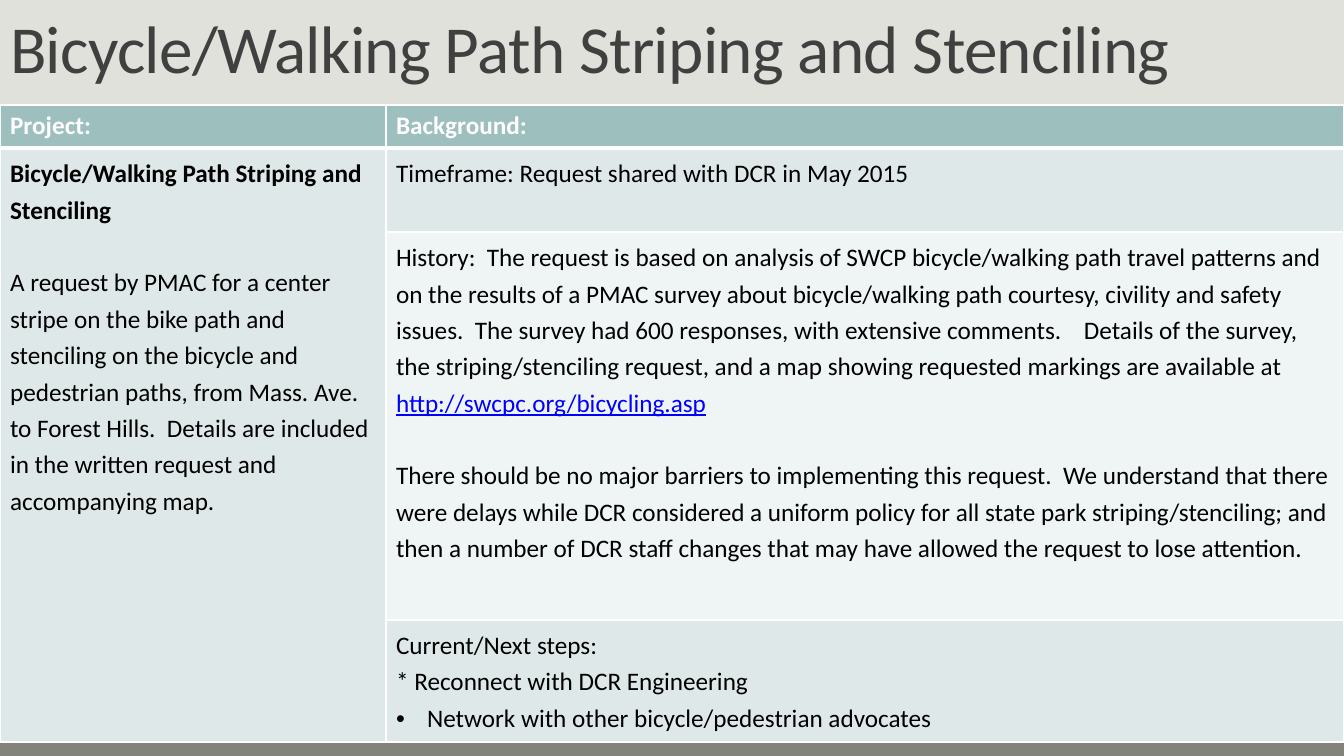
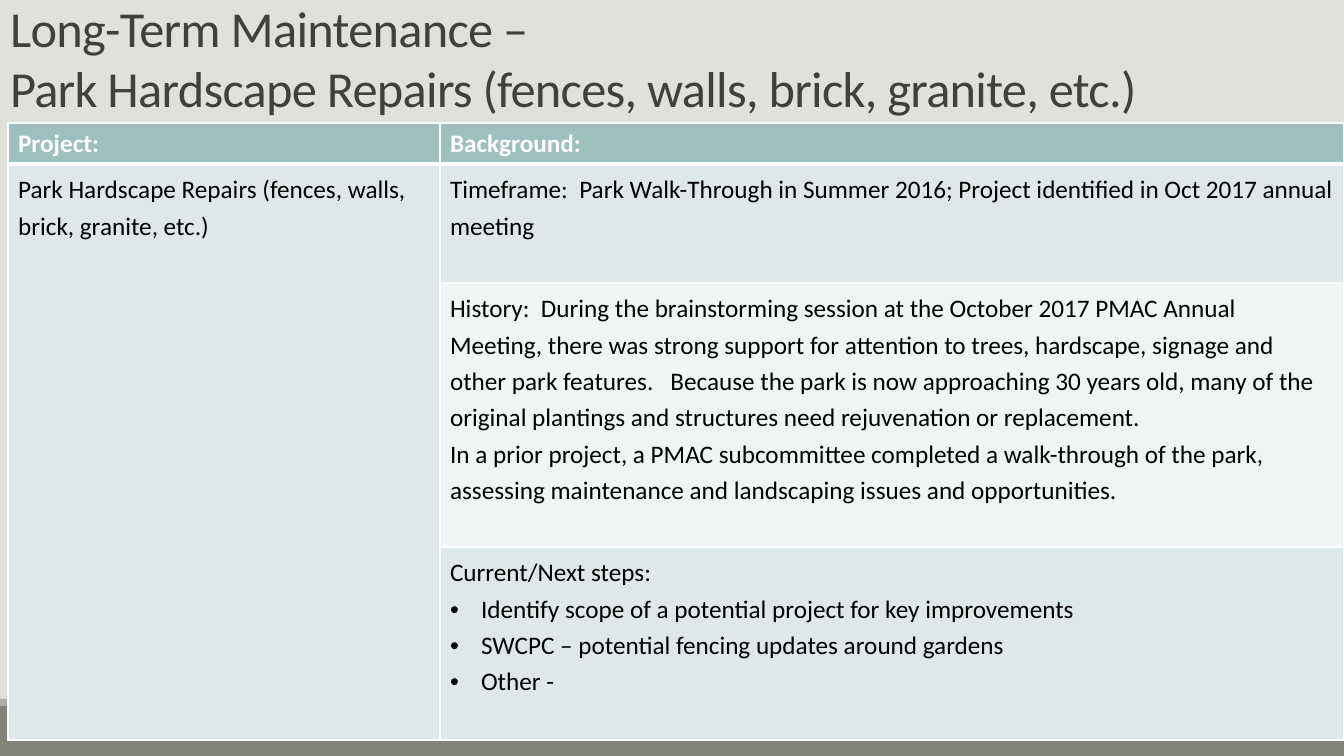
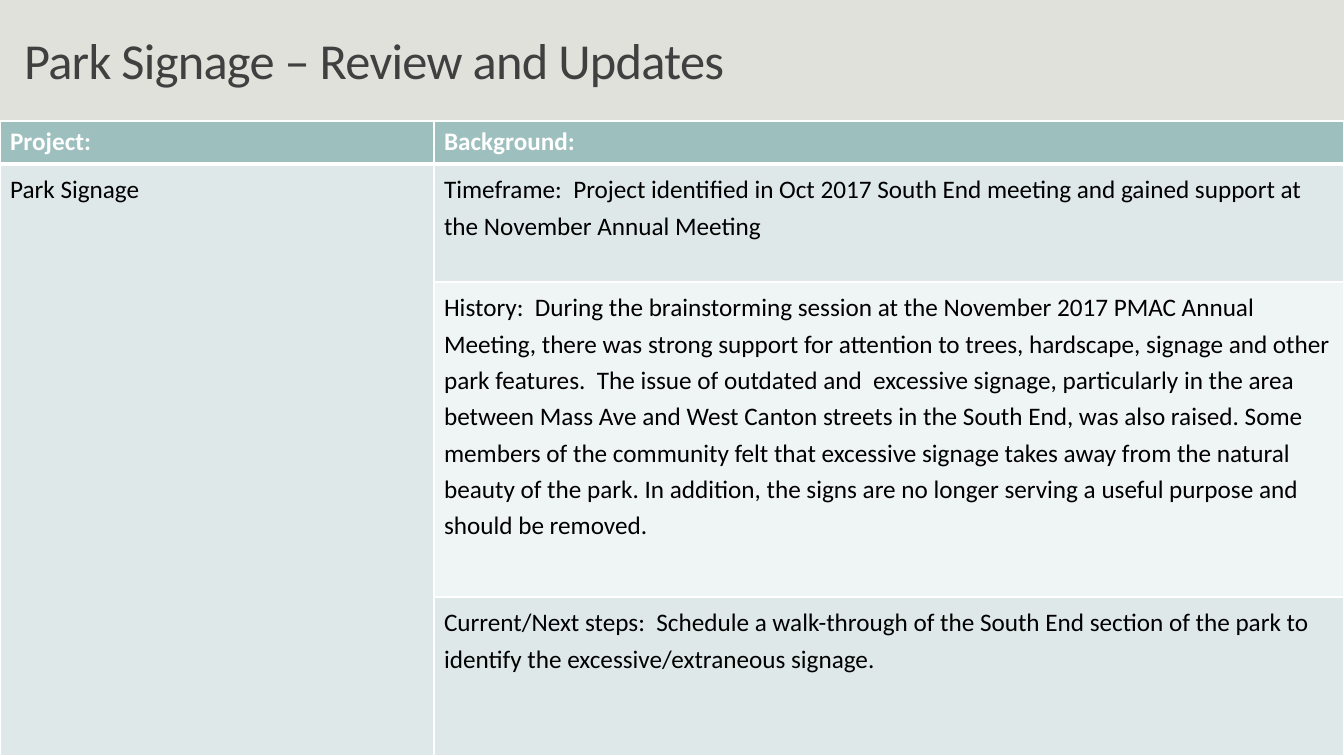
from dataclasses import dataclass

from lxml import etree
from pptx import Presentation
from pptx.dml.color import RGBColor
from pptx.enum.shapes import MSO_SHAPE
from pptx.enum.text import MSO_ANCHOR, MSO_AUTO_SIZE, PP_ALIGN
from pptx.oxml.ns import qn
from pptx.util import Pt

RECTANGLE = MSO_SHAPE.RECTANGLE
BOTTOM = MSO_ANCHOR.BOTTOM
NO_AUTOFIT = MSO_AUTO_SIZE.NONE
LEFT = PP_ALIGN.LEFT

EMU_PER_PX = 914400 / 100.8
SLIDE_WIDTH, SLIDE_HEIGHT = 1344, 756
TITLE_ONLY = 5
BULLET_INDENT = 31


@dataclass(frozen=True)
class Theme:
    font: str = "Calibri"
    background: str = "E1E1DB"
    band: str = "82847C"
    band_edge: str = "ACADA8"
    title: str = "404040"
    header: str = "9DBFBE"
    row_dark: str = "DFE8E8"
    row_light: str = "EFF4F4"
    text: str = "000000"
    link: str = "0000FF"
    white: str = "FFFFFF"
    title_large: int = 48
    title_small: int = 36
    body: int = 18
    line_spacing: int = 26
    border: int = 1
    header_border: int = 3


THEME = Theme()


def px(length):
    return round(length * EMU_PER_PX)


def add_text(text_frame, text, size=THEME.body, color=THEME.text, bold=False,
             underline=False, spacing=THEME.line_spacing, tracking=0,
             gap=False, bullet=False, same_paragraph=False):
    """Add text as a new paragraph, or to the last one."""
    paragraph = text_frame.paragraphs[-1]
    if text_frame.text and not same_paragraph:
        paragraph = text_frame.add_paragraph()
    if not same_paragraph:
        paragraph.alignment = LEFT
        if spacing:
            paragraph.line_spacing = Pt(spacing)
        if gap:
            paragraph.space_before = Pt(THEME.line_spacing)
        if bullet:
            properties = paragraph._p.get_or_add_pPr()
            properties.set("marL", str(px(BULLET_INDENT)))
            properties.set("indent", str(-px(BULLET_INDENT)))
            etree.SubElement(properties, qn("a:buFont"), typeface="Arial")
            etree.SubElement(properties, qn("a:buChar"), char="•")
    for number, line in enumerate(text.split("\n")):
        if number:
            paragraph.add_line_break()
        run = paragraph.add_run()
        run.text = line
        run.font.name = THEME.font
        run.font.size = Pt(size)
        run.font.bold = bold
        run.font.underline = underline
        run.font.color.rgb = RGBColor.from_string(color)
        if tracking:
            run._r.get_or_add_rPr().set("spc", str(tracking))


# Content: each table cell is a list of (text, format) pairs
SLIDES = [
    dict(
        title="Bicycle/Walking Path Striping and Stenciling",
        title_box=(0, -9, 1344, 101),
        title_format=dict(size=THEME.title_large, spacing=THEME.line_spacing),
        table_at=(0, 105), project_width=386, row_heights=(43, 84, 388, 122),
        project=[
            ("Bicycle/Walking Path Striping and Stenciling", dict(bold=True)),
            ("A request by PMAC for a center stripe on the bike path and stenciling on the "
             "bicycle and pedestrian paths, from Mass. Ave. to Forest Hills.  Details are "
             "included in the written request and accompanying map.", dict(gap=True)),
        ],
        background=[
            [("Timeframe: Request shared with DCR in May 2015", {})],
            [
                ("History:  The request is based on analysis of SWCP bicycle/walking path travel "
                 "patterns and on the results of a PMAC survey about bicycle/walking path "
                 "courtesy, civility and safety issues.  The survey had 600 responses, with "
                 "extensive comments.    Details of the survey, the striping/stenciling request, "
                 "and a map showing requested markings are available at ", {}),
                ("http://swcpc.org/bicycling.asp",
                 dict(color=THEME.link, underline=True, same_paragraph=True)),
                ("There should be no major barriers to implementing this request.  We understand "
                 "that there were delays while DCR considered a uniform policy for all state park "
                 "striping/stenciling; and then a number of DCR staff changes that may have "
                 "allowed the request to lose attention.", dict(gap=True)),
            ],
            [
                ("Current/Next steps:", {}),
                ("* Reconnect with DCR Engineering", {}),
                ("Network with other bicycle/pedestrian advocates", dict(bullet=True)),
            ],
        ],
    ),
    dict(
        title="Long-Term Maintenance –\n"
              "Park Hardscape Repairs (fences, walls, brick, granite, etc.)",
        title_box=(0, 0, 1290, 123),
        title_format=dict(size=THEME.title_small, spacing=None),
        table_at=(8, 123), project_width=432, row_heights=(41, 119, 264, 193),
        project=[("Park Hardscape Repairs (fences, walls, brick, granite, etc.)", {})],
        background=[
            [("Timeframe:  Park Walk-Through in Summer 2016; Project identified in Oct 2017 "
              "annual meeting", {})],
            [
                ("History:  During the brainstorming session at the October 2017 PMAC Annual "
                 "Meeting, there was strong support for attention to trees, hardscape, signage "
                 "and other park features.   Because the park is now approaching 30 years old, "
                 "many of the original plantings and structures need rejuvenation or "
                 "replacement.", {}),
                ("In a prior project, a PMAC subcommittee completed a walk-through of the park, "
                 "assessing maintenance and landscaping issues and opportunities.", {}),
            ],
            [
                ("Current/Next steps:", {}),
                ("Identify scope of a potential project for key improvements", dict(bullet=True)),
                ("SWCPC – potential fencing updates around gardens", dict(bullet=True)),
                ("Other -", dict(bullet=True)),
            ],
        ],
    ),
    dict(
        title="Park Signage – Review and Updates",
        title_box=(14, 10, 1290, 85),
        title_format=dict(size=THEME.title_small, spacing=None),
        table_at=(0, 121), project_width=434, row_heights=(43, 118, 315, 159),
        project=[("Park Signage", {})],
        background=[
            [("Timeframe:  Project identified in Oct 2017 South End meeting and gained support "
              "at the November Annual Meeting", {})],
            [("History:  During the brainstorming session at the November 2017 PMAC Annual "
              "Meeting, there was strong support for attention to trees, hardscape, signage and "
              "other park features.  The issue of outdated and  excessive signage, particularly "
              "in the area between Mass Ave and West Canton streets in the South End, was also "
              "raised. Some members of the community felt that excessive signage takes away from "
              "the natural beauty of the park. In addition, the signs are no longer serving a "
              "useful purpose and should be removed.", {})],
            [("Current/Next steps:  Schedule a walk-through of the South End section of the park "
              "to identify the excessive/extraneous signage.", {})],
        ],
    ),
]

presentation = Presentation()
presentation.slide_width = px(SLIDE_WIDTH)
presentation.slide_height = px(SLIDE_HEIGHT)
layout = presentation.slide_layouts[TITLE_ONLY]

# Shared background
master_fill = presentation.slide_master.background.fill
master_fill.solid()
master_fill.fore_color.rgb = RGBColor.from_string(THEME.background)

slides = [presentation.slides.add_slide(layout) for content in SLIDES]

# Shared bottom bands, drawn once and moved to the layout
BANDS = [(706, 50, THEME.band), (699, 7, THEME.band_edge)]
for number, (top, height, color) in enumerate(BANDS):
    band = slides[0].shapes.add_shape(RECTANGLE, 0, px(top), px(SLIDE_WIDTH), px(height))
    band.shadow.inherit = False
    band.fill.solid()
    band.fill.fore_color.rgb = RGBColor.from_string(color)
    band.line.fill.background()
    band.element.xpath("./p:nvSpPr/p:cNvPr")[0].set("id", str(20 + number))
    layout.shapes.element.insert(2 + number, band.element)

for slide, content in zip(slides, SLIDES):
    # Title
    title = slide.shapes.title
    title.left, title.top, title.width, title.height = map(px, content["title_box"])
    title.text_frame.word_wrap = True
    title.text_frame.auto_size = NO_AUTOFIT
    title.text_frame.vertical_anchor = BOTTOM
    add_text(title.text_frame, content["title"], color=THEME.title, tracking=-50,
             **content["title_format"])

    # Table grid
    left, top = content["table_at"]
    heights = content["row_heights"]
    widths = (content["project_width"], SLIDE_WIDTH - left - content["project_width"])
    table = slide.shapes.add_table(len(heights), len(widths), px(left), px(top),
                                   px(sum(widths)), px(sum(heights))).table
    table.horz_banding = False
    for column, width in zip(table.columns, widths):
        column.width = px(width)
    for row, height in zip(table.rows, heights):
        row.height = px(height)
    table.cell(1, 0).merge(table.cell(len(heights) - 1, 0))

    # Cell borders and fills
    row_fills = (THEME.header, THEME.row_dark, THEME.row_light, THEME.row_dark)
    for row_number, row in enumerate(table.rows):
        for column_number, cell in enumerate(row.cells):
            properties = cell._tc.get_or_add_tcPr()
            for side in ("lnL", "lnR", "lnT", "lnB"):
                under_header = (row_number, side) in ((0, "lnB"), (1, "lnT"))
                weight = THEME.header_border if under_header else THEME.border
                border = etree.SubElement(properties, qn("a:" + side), w=str(Pt(weight)))
                border_fill = etree.SubElement(border, qn("a:solidFill"))
                etree.SubElement(border_fill, qn("a:srgbClr"), val=THEME.white)
            in_project = column_number == 0 and row_number > 0
            color = THEME.row_dark if in_project else row_fills[row_number]
            cell.fill.solid()
            cell.fill.fore_color.rgb = RGBColor.from_string(color)

    # Cell text
    for column_number, heading in enumerate(("Project:", "Background:")):
        add_text(table.cell(0, column_number).text_frame, heading,
                 color=THEME.white, bold=True, spacing=None)
    cell_texts = [(table.cell(1, 0), content["project"])]
    for row_number, entries in enumerate(content["background"], start=1):
        cell_texts.append((table.cell(row_number, 1), entries))
    for cell, entries in cell_texts:
        for text, text_format in entries:
            add_text(cell.text_frame, text, **text_format)

presentation.save("out.pptx")
